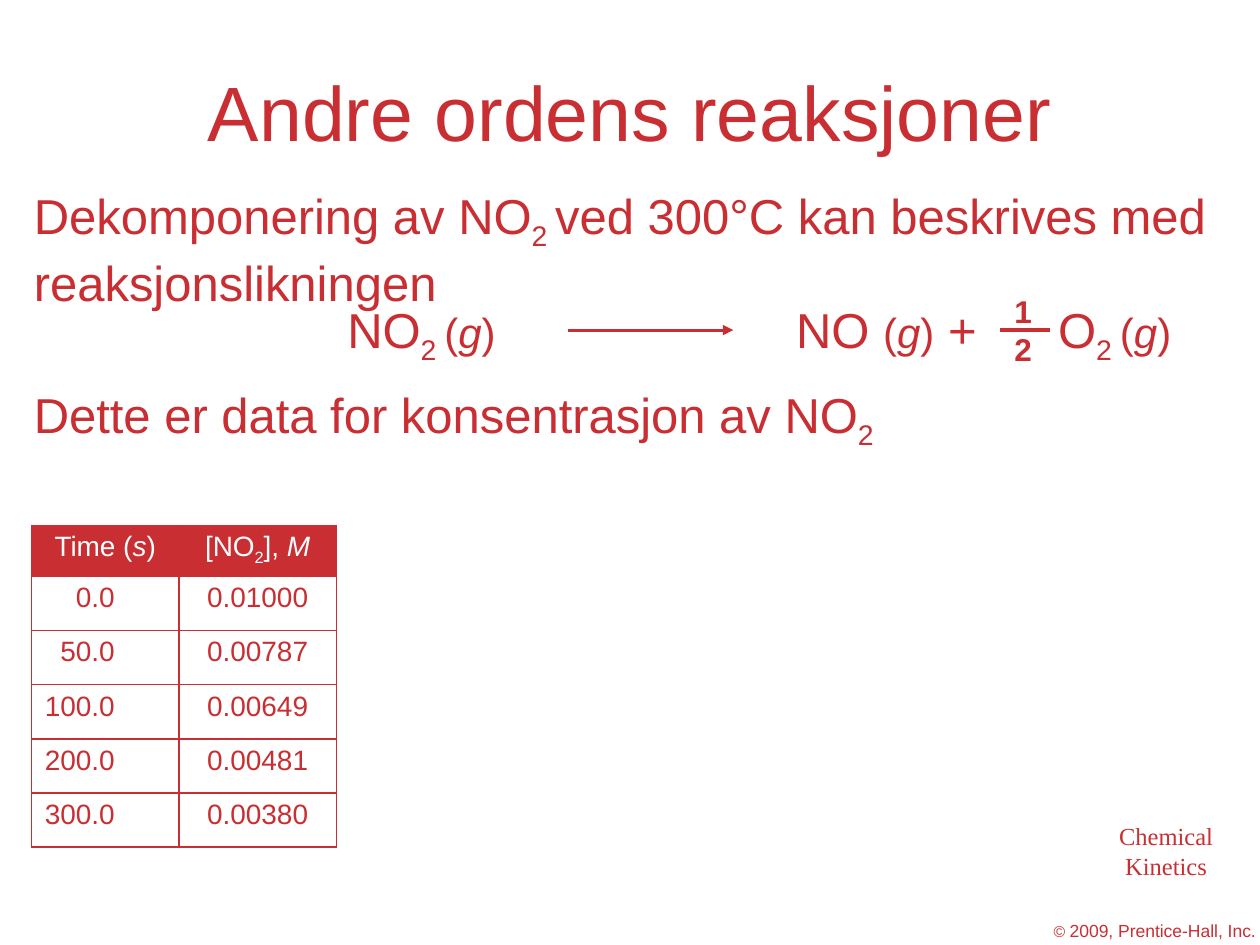
from lxml.etree import SubElement
from pptx import Presentation
from pptx.dml.color import RGBColor
from pptx.enum.shapes import MSO_CONNECTOR
from pptx.enum.text import MSO_ANCHOR, PP_ALIGN
from pptx.oxml.ns import qn
from pptx.util import Inches, Pt

RED, WHITE = "C82E32", "FFFFFF"
LEFT, CENTER, RIGHT = PP_ALIGN.LEFT, PP_ALIGN.CENTER, PP_ALIGN.RIGHT
GAS = [("(", 24, ""), ("g", 24, "i"), (")", 24, "")]

TITLE = [("Andre ordens reaksjoner", 44, "")]
TEXTS = [
    ((8.78, 6.47, 0.95, 0.57), CENTER, False, "Times New Roman",
     [[("Chemical", 14, "")], [("Kinetics", 14, "")]]),
    ((8.25, 7.25, 1.83, 0.25), CENTER, True, "Arial",
     [[("© ", 9, ""), ("2009, Prentice-Hall, Inc.", 10, "")]]),
    ((0.17, 1.42, 9.58, 1.03), LEFT, True, "Arial",
     [[("Dekomponering av NO", 28, ""), ("2 ", 28, "sub"),
       ("ved 300°C kan beskrives med reaksjonslikningen", 28, "")]]),
    ((2.62, 2.33, 1.45, 0.57), CENTER, False, "Arial",
     [[("NO", 28, ""), ("2 ", 28, "sub"), *GAS]]),
    ((6.22, 2.33, 3.35, 0.57), LEFT, True, "Arial",
     [[("NO ", 28, ""), *GAS, (" +\tO", 28, ""), ("2 ", 28, "sub"), *GAS]]),
    ((0.17, 3, 7.04, 0.57), LEFT, False, "Arial",
     [[("Dette er data for konsentrasjon av NO", 28, ""), ("2", 28, "sub")]]),
    ((7.95, 2.27, 0.34, 0.7), CENTER, False, "Arial",
     [[("1", 18, "b")], [("2", 18, "b")]]),
]
OXYGEN_TAB = 2.08
LINES = [(4.51, 5.82, 2.62, 1.75, True), (7.94, 8.33, 2.62, 2, False)]

HEADER = [
    [("Time (", 16, ""), ("s", 16, "i"), (")", 16, "")],
    [("[NO", 16, ""), ("2", 16, "sub"), ("], ", 16, ""), ("M", 16, "i")],
]
DATA = [("0.0", "0.01000"), ("50.0", "0.00787"), ("100.0", "0.00649"),
        ("200.0", "0.00481"), ("300.0", "0.00380")]
TABLE_AT = (0.25, 4.17, 2.42, 2.5)
COLS = (1.17, 1.25)
HEAD_H, ROW_H = 0.37, 0.43
TIME_INSET = 0.51


def rgb(color):
    return RGBColor.from_string(color)


def box(values):
    return [Inches(v) for v in values]


def write(p, runs, align, color=RED, font="Arial"):
    if any("\t" in text for text, _, _ in runs):
        tabs = SubElement(p._p.get_or_add_pPr(), qn("a:tabLst"))
        SubElement(tabs, qn("a:tab"), pos=str(Inches(OXYGEN_TAB)), algn="l")
    p.alignment = align
    for text, size, style in runs:
        r = p.add_run()
        r.text = text
        r.font.name, r.font.size = font, Pt(size)
        r.font.bold, r.font.italic = style == "b", style == "i"
        r.font.color.rgb = rgb(color)
        if style == "sub":
            r.font._element.set("baseline", "-25000")


def add_text(s, at, align, wrap, font, paragraphs):
    tf = s.shapes.add_textbox(*box(at)).text_frame
    tf.word_wrap = wrap
    for i, runs in enumerate(paragraphs):
        p = tf.add_paragraph() if i else tf.paragraphs[0]
        write(p, runs, align, font=font)


def add_line(s, x1, x2, y, width, arrow):
    line = s.shapes.add_connector(MSO_CONNECTOR.STRAIGHT, *box((x1, y, x2, y)))
    line.line.color.rgb = rgb(RED)
    line.line.width = Pt(width)
    if arrow:
        SubElement(line.line._get_or_add_ln(), qn("a:tailEnd"), type="triangle")
    SubElement(line._element.spPr, qn("a:effectLst"))


def set_cell(cell, runs, align, color, fill):
    write(cell.text_frame.paragraphs[0], runs, align, color)
    tcPr = cell._tc.get_or_add_tcPr()
    for side in ("a:lnL", "a:lnR", "a:lnT", "a:lnB"):
        ln = SubElement(tcPr, qn(side), w=str(Pt(1)))
        SubElement(SubElement(ln, qn("a:solidFill")), qn("a:srgbClr"), val=RED)
    if fill:
        cell.fill.solid()
        cell.fill.fore_color.rgb = rgb(fill)
    else:
        cell.fill.background()


def add_data(s):
    rows = [HEADER] + [[[(v, 16, "")] for v in row] for row in DATA]
    table = s.shapes.add_table(len(rows), len(COLS), *box(TABLE_AT)).table
    for col, width in zip(table.columns, COLS):
        col.width = Inches(width)
    for i, row in enumerate(rows):
        table.rows[i].height = Inches(ROW_H if i else HEAD_H)
        for j, runs in enumerate(row):
            cell = table.cell(i, j)
            is_time = i > 0 and j == 0
            if is_time:
                cell.margin_right = Inches(TIME_INSET)
            set_cell(cell, runs, RIGHT if is_time else CENTER,
                     RED if i else WHITE, None if i else RED)


def main():
    prs = Presentation()
    prs.slide_width, prs.slide_height = Inches(10), Inches(7.5)
    s = prs.slides.add_slide(prs.slide_layouts[5])
    title = s.shapes.title
    title.left, title.top, title.width, title.height = box((0.75, 0.25, 8.5, 1.25))
    title.text_frame.vertical_anchor = MSO_ANCHOR.MIDDLE
    write(title.text_frame.paragraphs[0], TITLE, CENTER)
    for text in TEXTS:
        add_text(s, *text)
    for line in LINES:
        add_line(s, *line)
    add_data(s)
    prs.save("out.pptx")


if __name__ == "__main__":
    main()
